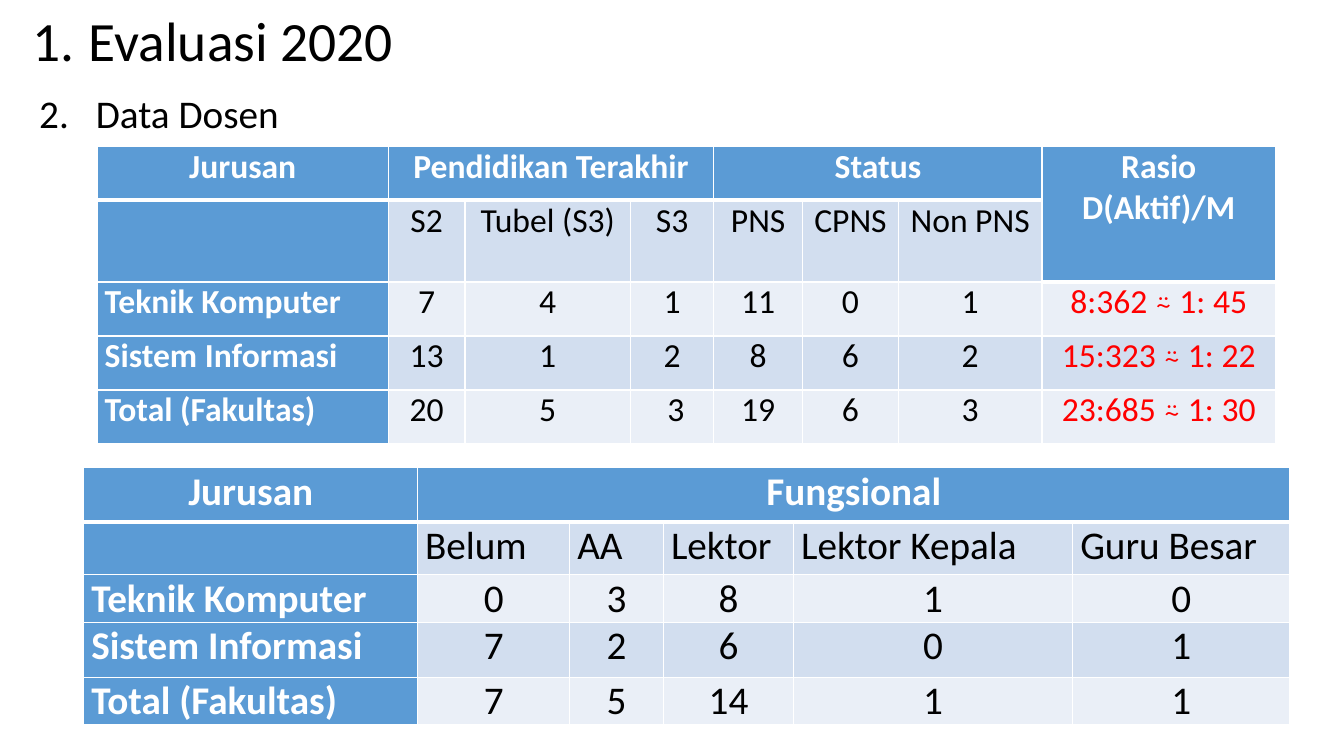
from lxml import etree
from pptx import Presentation
from pptx.dml.color import RGBColor
from pptx.enum.text import MSO_ANCHOR, PP_ALIGN
from pptx.oxml.ns import qn
from pptx.util import Pt

LEFT, CENTER = PP_ALIGN.LEFT, PP_ALIGN.CENTER
TOP, MIDDLE = MSO_ANCHOR.TOP, MSO_ANCHOR.MIDDLE

THEME = {
    "font": "Calibri",
    "text": "000000",
    "white": "FFFFFF",
    "header": "5B9BD5",
    "bands": ["EAEFF7", "D2DEEF"],
    "ratio": "FF0000",
    "title_size": 39.6,
    "body_size": 28,
    "staff_size": 24,
    "sign_size": 20,
    "rank_size": 28,
}


def add_run(p, text, size, color, bold=False):
    r = p.add_run()
    r.text = text
    r.font.name = THEME["font"]
    r.font.size = Pt(size)
    r.font.bold = bold
    r.font.color.rgb = RGBColor.from_string(color)


def add_border(cell, side, width):
    ln = etree.SubElement(cell._tc.get_or_add_tcPr(), qn(f"a:{side}"), w=str(Pt(width)))
    fill = etree.SubElement(ln, qn("a:solidFill"))
    etree.SubElement(fill, qn("a:srgbClr"), val=THEME["white"])


prs = Presentation()
prs.slide_width, prs.slide_height = Pt(960), Pt(540)
s = prs.slides.add_slide(prs.slide_layouts[6])

headings = [
    ("Evaluasi 2020", 1, (15.8, 6.5, 910.8, 49), THEME["title_size"], MIDDLE, 0),
    ("Data Dosen", 2, (20.9, 64.1, 910.8, 462.2), THEME["body_size"], TOP, 10),
]
for text, number, box, size, anchor, space in headings:
    tf = s.shapes.add_textbox(*map(Pt, box)).text_frame
    tf.word_wrap = True
    tf.vertical_anchor = anchor
    p = tf.paragraphs[0]
    p.line_spacing = 0.9
    p.space_before = Pt(space)
    pPr = p._p.get_or_add_pPr()
    pPr.set("marL", str(Pt(40.5)))
    pPr.set("indent", str(Pt(-40.5)))
    etree.SubElement(pPr, qn("a:buFont"), typeface="+mj-lt")
    etree.SubElement(pPr, qn("a:buAutoNum"), type="arabicPeriod", startAt=str(number))
    add_run(p, text, size, THEME["text"])

staff = {
    "at": (69.4, 104.4),
    "cols": [208, 54.8, 118.2, 59.6, 63.3, 68.5, 102.6, 166.8],
    "rows": [38.6, 58.5, 38.6, 38.6, 38.6],
    "size": THEME["staff_size"],
    "subhead": CENTER,
    "merges": [(0, 1, 0, 3), (0, 4, 0, 6), (0, 7, 1, 7)],
    "data": [
        ["Jurusan", "Pendidikan Terakhir", "", "", "Status", "", "", "Rasio D(Aktif)/M"],
        ["", "S2", "Tubel (S3)", "S3", "PNS", "CPNS", "Non PNS", ""],
        ["Teknik Komputer", "7", "4", "1", "11", "0", "1", "8:362 ⍨ 1: 45"],
        ["Sistem Informasi", "13", "1", "2", "8", "6", "2", "15:323 ⍨ 1: 22"],
        ["Total (Fakultas)", "20", "5", " 3", "19", "6", "3", "23:685 ⍨ 1: 30"],
    ],
}
ranks = {
    "at": (59.8, 334.1),
    "cols": [238.5, 108.7, 67, 92.9, 199.4, 155.2],
    "rows": [38.9, 37.6, 34.2, 38.9, 34.2],
    "size": THEME["rank_size"],
    "subhead": LEFT,
    "merges": [(0, 1, 0, 5)],
    "data": [
        ["Jurusan", "Fungsional", "", "", "", ""],
        ["", "Belum", "AA", "Lektor", "Lektor Kepala", "Guru Besar"],
        ["Teknik Komputer", "0", "3", "8", "1", "0"],
        ["Sistem Informasi", "7", "2", "6", "0", "1"],
        ["Total (Fakultas)", "7", "5", "14", "1", "1"],
    ],
}

for spec_table in (staff, ranks):
    cols, rows, size = spec_table["cols"], spec_table["rows"], spec_table["size"]
    extent = (*spec_table["at"], sum(cols), sum(rows))
    table = s.shapes.add_table(len(rows), len(cols), *map(Pt, extent)).table
    table.horz_banding = False
    for column, width in zip(table.columns, cols):
        column.width = Pt(width)
    for row, height in zip(table.rows, rows):
        row.height = Pt(height)

    head_end = [0] * len(cols)
    for top, left, bottom, right in spec_table["merges"]:
        head_end[left:right + 1] = [bottom] * (right - left + 1)

    for i, values in enumerate(spec_table["data"]):
        for j, value in enumerate(values):
            cell = table.cell(i, j)
            is_head = j == 0 or i <= head_end[j]
            cell.margin_left = cell.margin_right = Pt(5.4)
            cell.margin_top = cell.margin_bottom = 0
            for side in ("lnL", "lnR"):
                add_border(cell, side, 1)
            add_border(cell, "lnT", 3 if i == head_end[j] + 1 else 1)
            add_border(cell, "lnB", 3 if i == head_end[j] else 1)
            cell.fill.solid()
            fill = THEME["header"] if is_head else THEME["bands"][i % 2]
            cell.fill.fore_color.rgb = RGBColor.from_string(fill)
            if not value:
                continue
            p = cell.text_frame.paragraphs[0]
            p.alignment = CENTER
            if i == 1:
                p.alignment = spec_table["subhead"]
            elif i > 1 and j == 0:
                p.alignment = LEFT
            before, sign, after = value.partition("⍨")
            color = THEME["white"] if is_head else THEME["ratio"] if sign else THEME["text"]
            add_run(p, before, size, color, is_head)
            if sign:
                add_run(p, sign, THEME["sign_size"], color)
                add_run(p, after, size, color)

    for top, left, bottom, right in spec_table["merges"]:
        table.cell(top, left).merge(table.cell(bottom, right))

prs.save("out.pptx")
